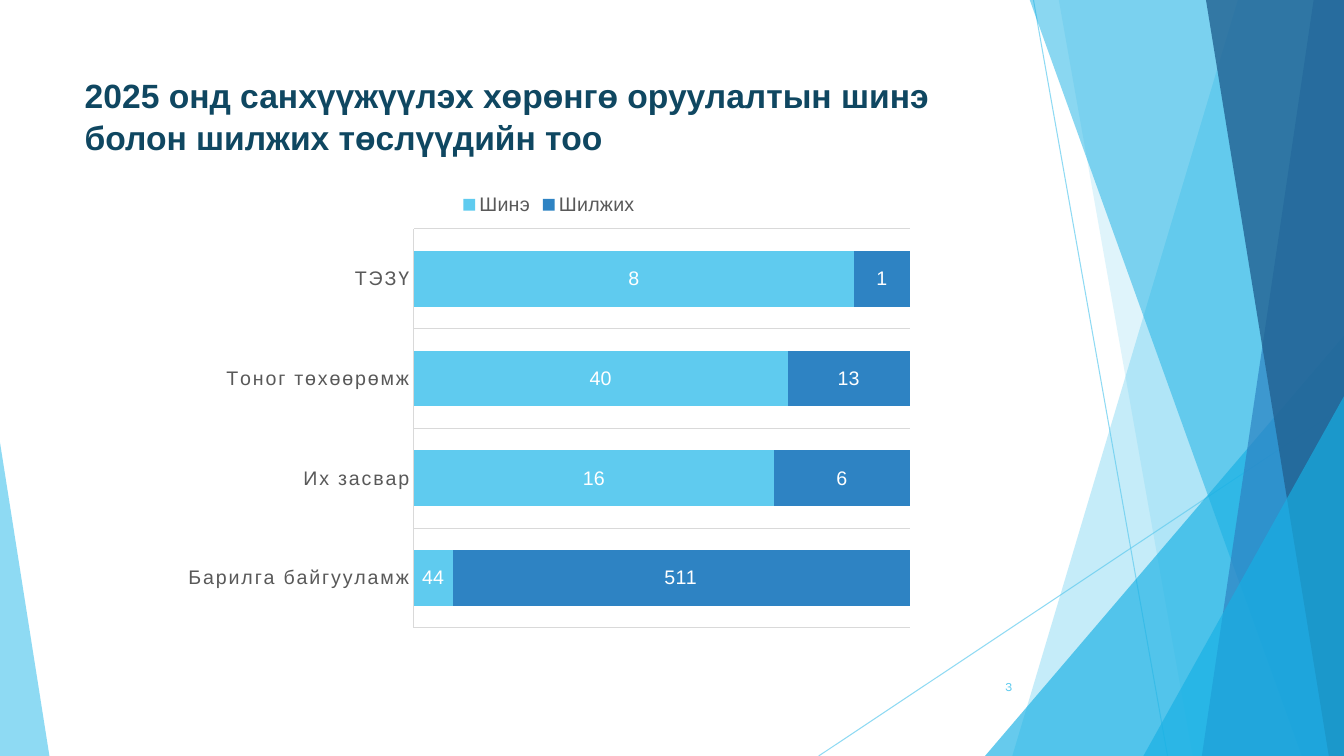
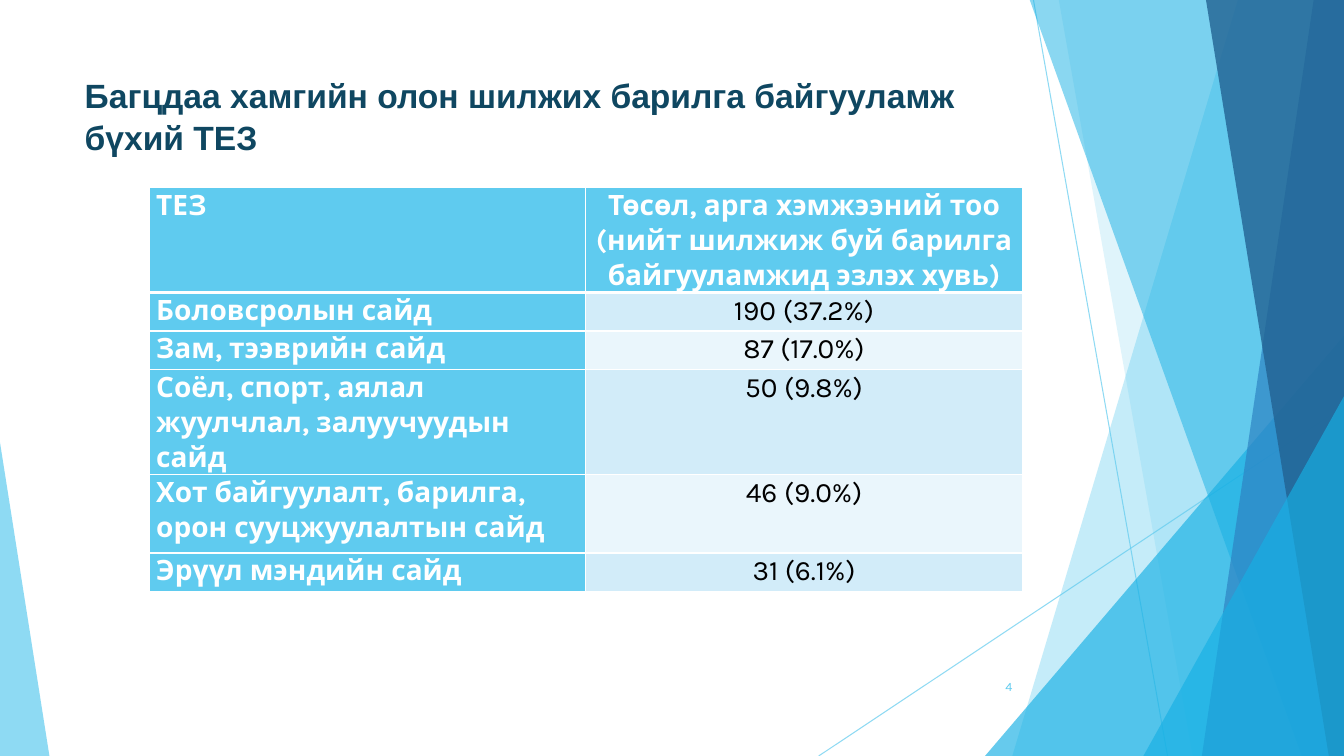
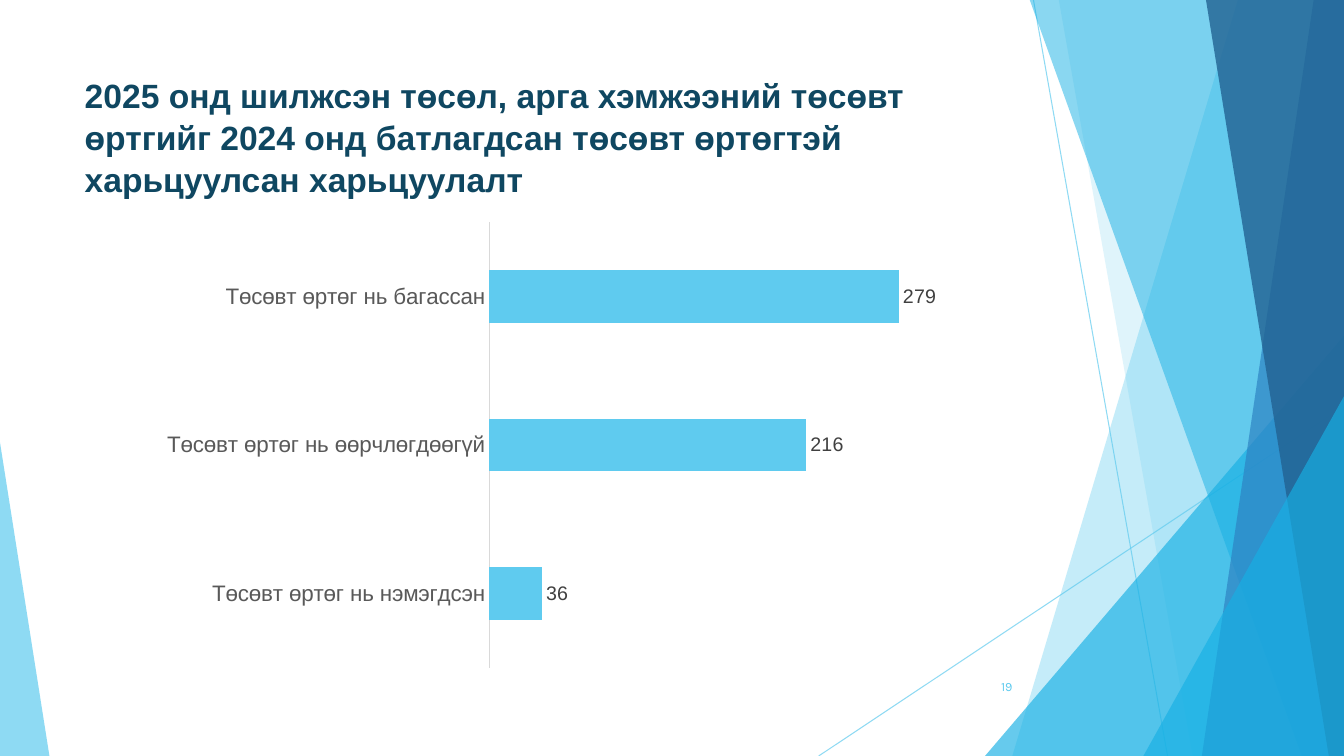
import pptx
import pptx.util
import pptx.chart.data
import pptx.dml.color
import pptx.enum.chart
import pptx.enum.shapes
import pptx.enum.text
import pptx.oxml
import pptx.oxml.ns

Pt = pptx.util.Pt
ALIGN = pptx.enum.text.PP_ALIGN
ANCHOR = pptx.enum.text.MSO_ANCHOR
CHART = pptx.enum.chart.XL_CHART_TYPE
LABEL = pptx.enum.chart.XL_LABEL_POSITION
SHAPE = pptx.enum.shapes.MSO_SHAPE

# Shared style: 100 px to the inch
EMU_PER_PX = 9144
WIDTH, HEIGHT = 1333, 750
SKY, CYAN, BLUE, NAVY = "5FCBEF", "17B0E4", "2E83C3", "226292"
TITLE_COLOR, WHITE, BLACK = "0F4761", "FFFFFF", "000000"
GRAY, DARK_GRAY, RULE = "595959", "404040", "D9D9D9"
ROW_TINTS = ("D2ECF9", "EAF6FC")
HEADING_FONT, BODY_FONT = "Arial", "Karla"

# Backdrop, back to front
RAYS = [((1025, 0), (1158, HEIGHT)), ((WIDTH, 403), (812, HEIGHT))]
# band: left edge at top and at bottom; triangle: box and apex
BACKDROP = [
    ("band", (1228, 1004), SKY, 36),
    ("band", (1050, 1183), SKY, 20),
    ("triangle", (977, 333, 356, 417, 1), CYAN, 66),
    ("band", (1021, 1291), CYAN, 50),
    ("band", (1303, 1192), BLUE, 70),
    ("band", (1196, 1318), NAVY, 80),
    ("triangle", (1134, 393, 199, 357, 1), CYAN, 66),
    ("triangle", (0, 439, 49, 311, 0), SKY, 70),
]

# Slide content
PROJECT_COUNT = {
    "title": "2025 онд санхүүжүүлэх хөрөнгө оруулалтын шинэ болон шилжих төслүүдийн тоо",
    "title_height": 92, "number": "3",
    "chart": {
        "box": (172, 181, 745, 451), "type": CHART.BAR_STACKED_100,
        "categories": ["Барилга байгууламж", "Их засвар", "Тоног төхөөрөмж", "ТЭЗҮ"],
        "series": [("Шинэ", [44, 16, 40, 8], SKY), ("Шилжих", [511, 6, 13, 1], BLUE)],
        "gap": 79, "overlap": 100, "axis_size": 14, "spacing": 120,
        "legend": True, "gridlines": True,
        "label_position": LABEL.CENTER, "label_color": WHITE, "format": "General",
    },
}
TOP_MINISTERS = {
    "title": "Багцдаа хамгийн олон шилжих барилга байгууламж бүхий ТЕЗ",
    "title_height": 77, "number": "4",
    "table": {
        "box": (148, 186, 866, 348), "heights": [78, 38, 38, 78, 78, 38],
        "rows": [
            ("ТЕЗ", "Төсөл, арга хэмжээний тоо (нийт шилжиж буй барилга байгууламжид эзлэх хувь)"),
            ("Боловсролын сайд", "190 (37.2%)"),
            ("Зам, тээврийн сайд", "87 (17.0%)"),
            ("Соёл, спорт, аялал жуулчлал, залуучуудын сайд", "50 (9.8%)"),
            ("Хот байгуулалт, барилга, орон сууцжуулалтын сайд", "46 (9.0%)"),
            ("Эрүүл мэндийн сайд", "31 (6.1%)"),
        ],
    },
}
COST_CHANGE = {
    "title": "2025 онд шилжсэн төсөл, арга хэмжээний төсөвт өртгийг 2024 онд "
             "батлагдсан төсөвт өртөгтэй харьцуулсан харьцуулалт",
    "title_height": 144, "number": "19",
    "chart": {
        "box": (150, 211, 788, 461), "type": CHART.BAR_CLUSTERED,
        "categories": ["Төсөвт өртөг нь нэмэгдсэн", "Төсөвт өртөг нь өөрчлөгдөөгүй",
                       "Төсөвт өртөг нь багассан"],
        "series": [("Series 1", [36, 216, 279], SKY)],
        "gap": 182, "overlap": 0, "axis_size": 16, "spacing": 0,
        "legend": False, "gridlines": False,
        "label_position": LABEL.OUTSIDE_END, "label_color": DARK_GRAY, "format": "#,##0",
    },
}
SLIDES = [PROJECT_COUNT, TOP_MINISTERS, COST_CHANGE]


def px(*lengths):
    return [pptx.util.Emu(length * EMU_PER_PX) for length in lengths]


def rgb(color):
    return pptx.dml.color.RGBColor.from_string(color)


def paint(fill, color, opacity=100):
    fill.solid()
    fill.fore_color.rgb = rgb(color)
    if opacity < 100:
        for tint in fill.fore_color._xFill.iter(pptx.oxml.ns.qn("a:srgbClr")):
            pptx.oxml.ns.qn("a:alpha")
            tint.append(xml(f'<a:alpha {NS} val="{opacity * 1000}"/>'))


NS = pptx.oxml.ns.nsdecls("a")


def xml(text):
    return pptx.oxml.parse_xml(text)


def style_font(font, size, color, name, bold=False):
    font.size, font.name, font.bold = Pt(size), name, bold
    font.color.rgb = rgb(color)


def write(frame, text, size, color, font, bold=False, align=ALIGN.LEFT, spacing=1.0):
    para = frame.paragraphs[0]
    para.alignment, para.line_spacing = align, spacing
    span = para.add_run()
    span.text = text
    style_font(span.font, size, color, font, bold)


def draw_backdrop(page, layout):
    """Draw the backdrop as one group and hand it to the shared layout."""
    group = page.shapes.add_group_shape()
    for start, end in RAYS:
        ray = group.shapes.add_connector(
            pptx.enum.shapes.MSO_CONNECTOR.STRAIGHT, *px(*start, *end))
        ray.line.width = Pt(0.75)
        paint(ray.line.fill, SKY, 70)
        ray.element.spPr.append(xml(f"<a:effectLst {NS}/>"))
    for kind, place, color, opacity in BACKDROP:
        if kind == "band":
            top, bottom = place
            outline = group.shapes.build_freeform(*px(top, -1))
            corners = [(WIDTH, -1), (WIDTH, HEIGHT), (bottom, HEIGHT)]
            outline.add_line_segments([px(*corner) for corner in corners], close=True)
            shape = outline.convert_to_shape()
        else:
            *box, apex = place
            shape = group.shapes.add_shape(SHAPE.ISOSCELES_TRIANGLE, *px(*box))
            shape.adjustments[0] = apex
        paint(shape.fill, color, opacity)
        shape.line.fill.background()
        shape.shadow.inherit = False
    layout.shapes.element.append(group.element)


def add_title(page, text, height):
    title = page.shapes.title
    title.left, title.top, title.width, title.height = px(74, 67, 940, height)
    frame = title.text_frame
    frame.word_wrap = True
    frame.auto_size = pptx.enum.text.MSO_AUTO_SIZE.NONE
    frame.vertical_anchor = ANCHOR.TOP
    write(frame, text, 24, TITLE_COLOR, HEADING_FONT, bold=True, spacing=1.05)


def add_number(page, number):
    box = page.shapes.add_textbox(*px(939, 661, 75, 40))
    box.text_frame.word_wrap = True
    box.text_frame.vertical_anchor = ANCHOR.MIDDLE
    write(box.text_frame, number, 9, SKY, BODY_FONT, align=ALIGN.RIGHT)


def add_bar_chart(page, content):
    data = pptx.chart.data.CategoryChartData(number_format=content["format"])
    data.categories = content["categories"]
    for name, values, _ in content["series"]:
        data.add_series(name, values)
    chart = page.shapes.add_chart(content["type"], *px(*content["box"]), data).chart
    style_font(chart.font, 10, BLACK, BODY_FONT)
    chart.has_title = False
    chart.has_legend = content["legend"]
    if chart.has_legend:
        chart.legend.position = pptx.enum.chart.XL_LEGEND_POSITION.TOP
        chart.legend.include_in_layout = False
        style_font(chart.legend.font, 14, GRAY, HEADING_FONT)

    # Axes
    chart.value_axis.visible = False
    chart.value_axis.has_major_gridlines = False
    axis = chart.category_axis
    axis.major_tick_mark = axis.minor_tick_mark = pptx.enum.chart.XL_TICK_MARK.NONE
    axis.has_major_gridlines = content["gridlines"]
    lines = [axis.format.line]
    if content["gridlines"]:
        lines.append(axis.major_gridlines.format.line)
    for line in lines:
        line.width = Pt(0.75)
        paint(line.fill, RULE)
    style_font(axis.tick_labels.font, content["axis_size"], GRAY, HEADING_FONT)
    for properties in chart.element.xpath(".//c:catAx/c:txPr//a:defRPr"):
        properties.set("spc", str(content["spacing"]))

    # Bars and their values
    plot = chart.plots[0]
    plot.vary_by_categories = False
    plot.gap_width, plot.overlap = content["gap"], content["overlap"]
    for series, (_, _, color) in zip(plot.series, content["series"]):
        paint(series.format.fill, color)
        labels = series.data_labels
        labels.show_value = True
        labels.position = content["label_position"]
        labels.number_format = content["format"]
        labels.number_format_is_linked = False
        style_font(labels.font, 14, content["label_color"], HEADING_FONT)


def set_borders(cell, widths):
    properties = cell._tc.get_or_add_tcPr()
    for index, (side, width) in enumerate(widths.items()):
        properties.insert(index, xml(
            f'<a:{side} {NS} w="{Pt(width)}"><a:solidFill>'
            f'<a:srgbClr val="{WHITE}"/></a:solidFill></a:{side}>'))


def add_minister_table(page, content):
    rows = content["rows"]
    table = page.shapes.add_table(len(rows), len(rows[0]), *px(*content["box"])).table
    for row, height in zip(table.rows, content["heights"]):
        row.height = px(height)[0]
    for row_index, texts in enumerate(rows):
        for column_index, text in enumerate(texts):
            cell = table.cell(row_index, column_index)
            heading = row_index == 0 or column_index == 0
            cell.margin_left, cell.margin_right = px(7, 7)
            cell.margin_top = cell.margin_bottom = 0
            paint(cell.fill, SKY if heading else ROW_TINTS[(row_index - 1) % 2])
            set_borders(cell, {"lnL": 1, "lnR": 1, "lnT": 3 if row_index == 1 else 1,
                               "lnB": 3 if row_index == 0 else 1})
            write(cell.text_frame, text, 20, WHITE if heading else BLACK, BODY_FONT,
                  bold=heading, spacing=1.07,
                  align=ALIGN.CENTER if column_index else ALIGN.LEFT)


def main():
    deck = pptx.Presentation()
    deck.slide_width, deck.slide_height = px(WIDTH, HEIGHT)
    layout = deck.slide_layouts.get_by_name("Title Only")
    for holder in list(layout.placeholders):
        if holder.placeholder_format.idx:
            holder.element.getparent().remove(holder.element)
    for index, content in enumerate(SLIDES):
        page = deck.slides.add_slide(layout)
        if index == 0:
            draw_backdrop(page, layout)
        add_title(page, content["title"], content["title_height"])
        if "chart" in content:
            add_bar_chart(page, content["chart"])
        if "table" in content:
            add_minister_table(page, content["table"])
        add_number(page, content["number"])
    deck.save("out.pptx")


if __name__ == "__main__":
    main()
